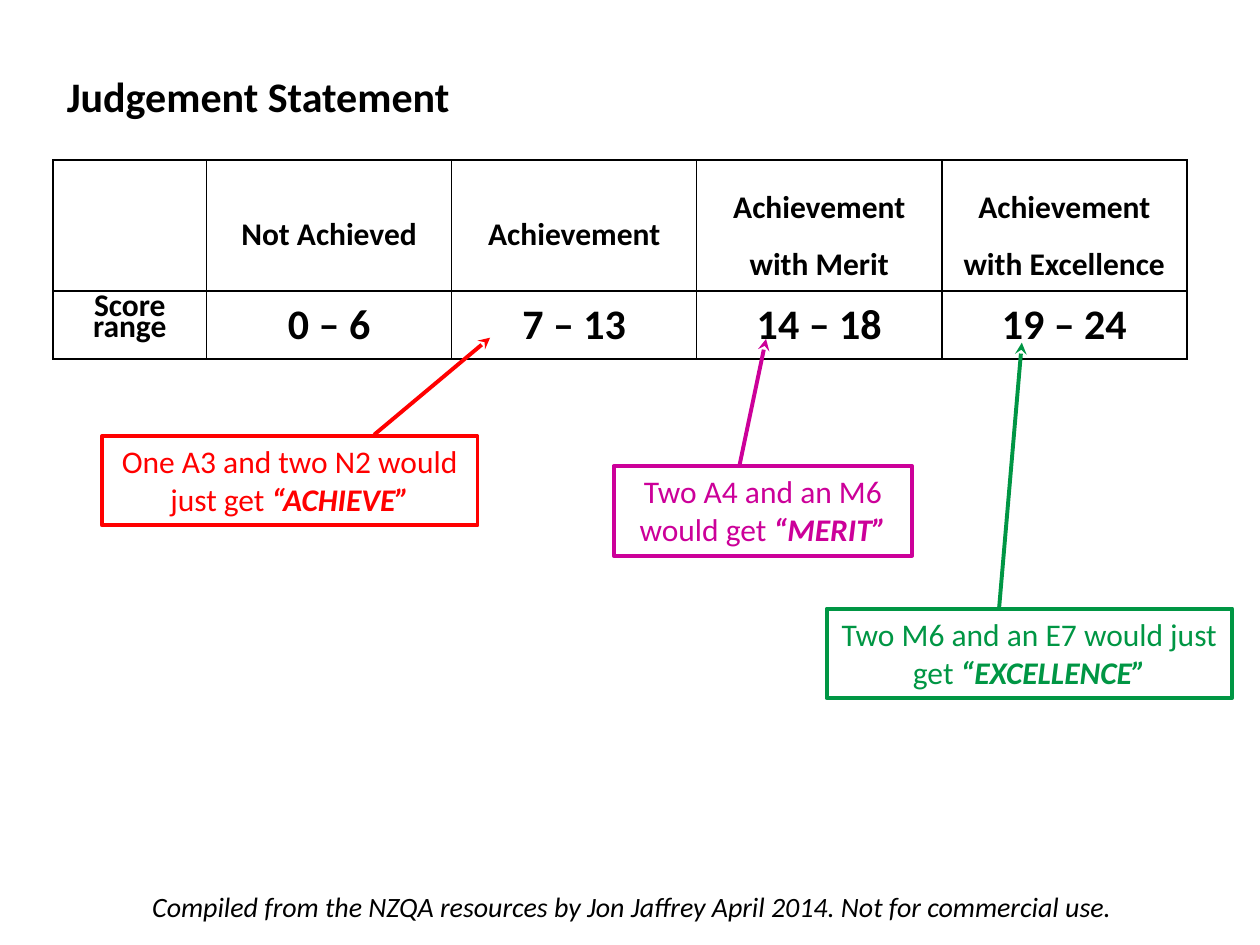
from lxml import etree
from pptx import Presentation
from pptx.dml.color import RGBColor
from pptx.enum.shapes import MSO_CONNECTOR, MSO_SHAPE
from pptx.enum.text import MSO_ANCHOR, PP_ALIGN
from pptx.oxml.ns import qn
from pptx.util import Inches, Pt

FONT = "Calibri"
BLACK = RGBColor(0x00, 0x00, 0x00)
RED = RGBColor(0xFF, 0x00, 0x00)
MAGENTA = RGBColor(0xCC, 0x00, 0x99)
GREEN = RGBColor(0x00, 0x96, 0x44)

GRADES = ["", "Not Achieved", "Achievement", "Achievement with Merit",
          "Achievement with Excellence"]
SCORES = ["Score range", "0 – 6", "7 – 13", "14 – 18", "19 – 24"]
COLUMN_WIDTHS = [1.22] + [1.945] * 4
ROW_HEIGHTS = [1.03, 0.53]

# Wording, grade, colour, box (left, top, width, height), arrow start and end
EXAMPLES = [
    ("One A3 and two N2 would just get ", "“ACHIEVE”", RED,
     (0.81, 3.46, 2.98, 0.71), (2.97, 3.45), (3.89, 2.68)),
    ("Two A4 and an M6 would get ", "“MERIT”", MAGENTA,
     (4.87, 3.7, 2.37, 0.71), (5.87, 3.69), (6.08, 2.69)),
    ("Two M6 and an E7 would just get ", "“EXCELLENCE”", GREEN,
     (6.56, 4.83, 3.22, 0.71), (7.93, 4.82), (8.11, 2.72)),
]


def add_run(paragraph, text, size, color=BLACK, bold=False, italic=False):
    run = paragraph.add_run()
    run.text = text
    font = run.font
    font.name, font.size, font.bold, font.italic = FONT, Pt(size), bold, italic
    font.color.rgb = color


def add_title(slide):
    title = slide.shapes.title
    title.left, title.top = Inches(0.43), Inches(0.51)
    title.width, title.height = Inches(3.27), Inches(0.5)
    frame = title.text_frame
    frame.word_wrap = False
    frame.vertical_anchor = MSO_ANCHOR.TOP
    frame.paragraphs[0].alignment = PP_ALIGN.LEFT
    add_run(frame.paragraphs[0], "Judgement Statement", 24, bold=True)


def add_credit(slide):
    credit = slide.shapes.add_textbox(
        Inches(1.11), Inches(7.01), Inches(8.28), Inches(0.37))
    credit.text_frame.word_wrap = True
    add_run(credit.text_frame.paragraphs[0],
            "Compiled from the NZQA resources by Jon Jaffrey April 2014. "
            "Not for commercial use.", 16, italic=True)


def outline_cell(cell):
    properties = cell._tc.get_or_add_tcPr()
    for side in ("a:lnL", "a:lnR", "a:lnT", "a:lnB"):
        border = etree.SubElement(properties, qn(side), w=str(Pt(1)))
        fill = etree.SubElement(border, qn("a:solidFill"))
        etree.SubElement(fill, qn("a:srgbClr"), val=str(BLACK))


def fill_cell(cell, text, size, line_spacing=None, anchor=MSO_ANCHOR.MIDDLE):
    cell.margin_left = cell.margin_right = Inches(0.06)
    cell.margin_top = cell.margin_bottom = Inches(0.07)
    cell.vertical_anchor = anchor
    outline_cell(cell)
    cell.fill.background()
    if not text:
        return
    paragraph = cell.text_frame.paragraphs[0]
    paragraph.alignment = PP_ALIGN.CENTER
    if line_spacing:
        paragraph.line_spacing = line_spacing
        paragraph.space_before = Pt(3)
    add_run(paragraph, text, size, bold=True)


def add_score_table(slide):
    table = slide.shapes.add_table(
        len(ROW_HEIGHTS), len(COLUMN_WIDTHS), Inches(0.42), Inches(1.27),
        Inches(sum(COLUMN_WIDTHS)), Inches(sum(ROW_HEIGHTS))).table
    table.first_row = table.horz_banding = False
    for column, width in zip(table.columns, COLUMN_WIDTHS):
        column.width = Inches(width)
    for row, height in zip(table.rows, ROW_HEIGHTS):
        row.height = Inches(height)
    for index, (grade, score) in enumerate(zip(GRADES, SCORES)):
        fill_cell(table.cell(0, index), grade, 18, 1.5)
        if index == 0:
            fill_cell(table.cell(1, index), score, 18, Pt(12))
        else:
            fill_cell(table.cell(1, index), score, 24, anchor=MSO_ANCHOR.TOP)


def add_example_box(slide, wording, grade, color, box):
    example = slide.shapes.add_shape(MSO_SHAPE.RECTANGLE, *map(Inches, box))
    example.shadow.inherit = False
    example.fill.background()
    example.line.color.rgb = color
    example.line.width = Pt(2.25)
    frame = example.text_frame
    frame.word_wrap = True
    frame.vertical_anchor = MSO_ANCHOR.TOP
    paragraph = frame.paragraphs[0]
    paragraph.alignment = PP_ALIGN.CENTER
    add_run(paragraph, wording, 18, color)
    add_run(paragraph, grade, 18, color, bold=True, italic=True)


def add_arrow(slide, start, end, color):
    arrow = slide.shapes.add_connector(
        MSO_CONNECTOR.STRAIGHT, *map(Inches, start + end))
    arrow.line.color.rgb = color
    arrow.line.width = Pt(2.25)
    etree.SubElement(arrow.line._get_or_add_ln(), qn("a:tailEnd"), type="stealth")
    etree.SubElement(arrow._element.spPr, qn("a:effectLst"))


def main():
    presentation = Presentation()
    presentation.slide_width, presentation.slide_height = Inches(10), Inches(7.5)
    slide = presentation.slides.add_slide(presentation.slide_layouts[5])
    add_credit(slide)
    add_title(slide)
    add_score_table(slide)
    for wording, grade, color, box, start, end in EXAMPLES:
        add_example_box(slide, wording, grade, color, box)
        add_arrow(slide, start, end, color)
    presentation.save("out.pptx")


if __name__ == "__main__":
    main()
